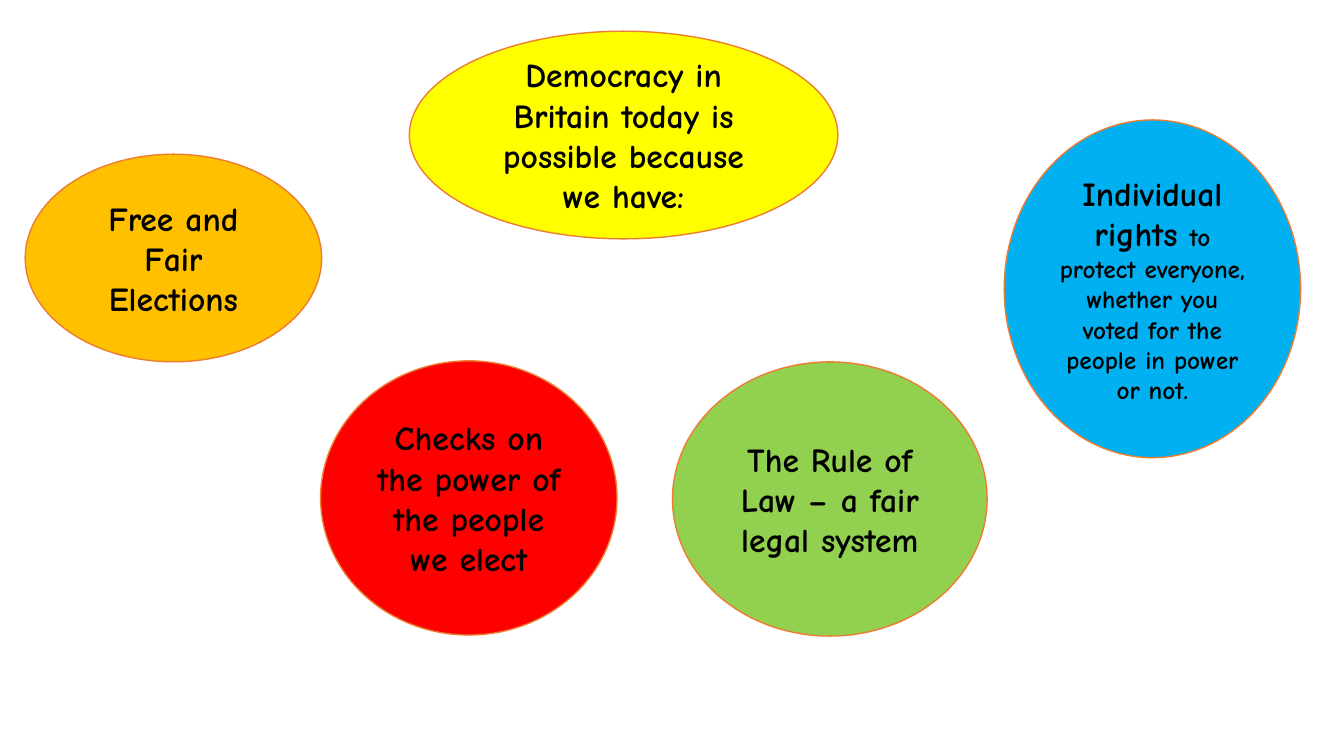
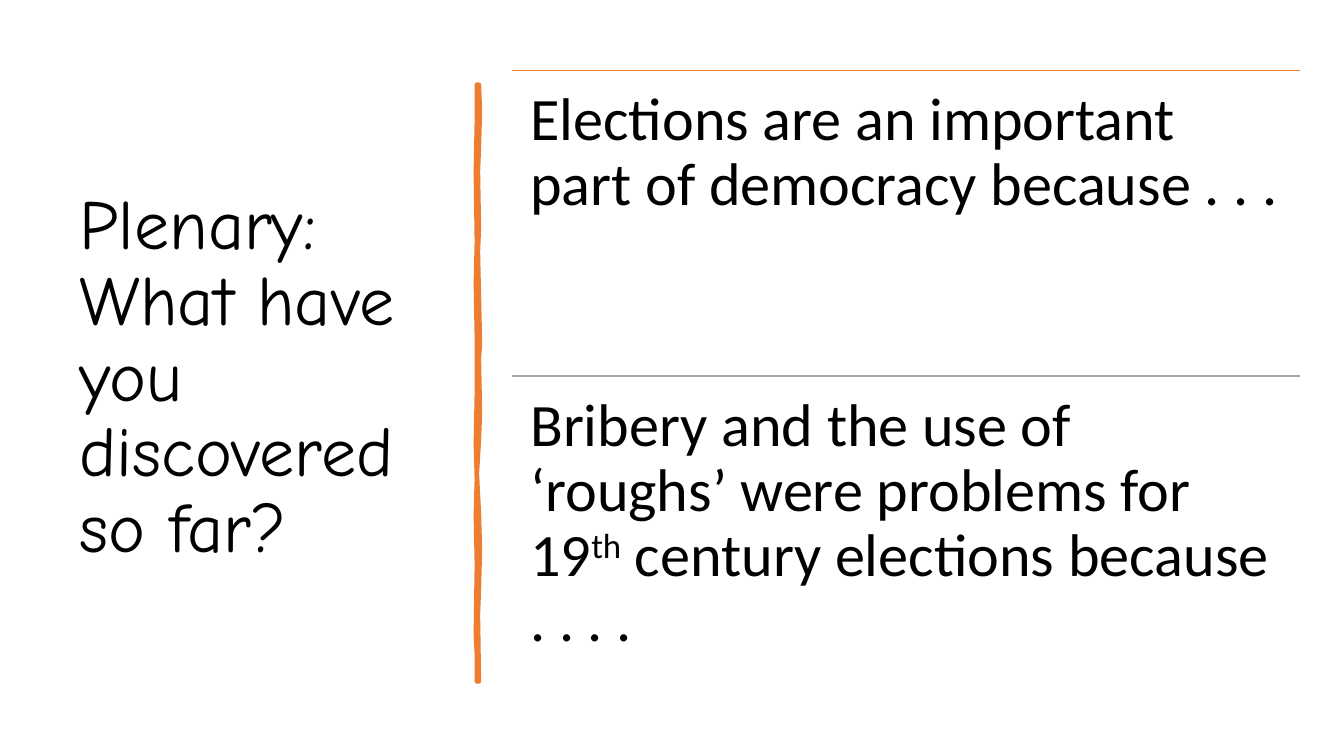
from dataclasses import dataclass

from lxml import etree
from pptx import Presentation
from pptx.dml.color import RGBColor
from pptx.enum.shapes import MSO_CONNECTOR, MSO_SHAPE
from pptx.enum.text import MSO_ANCHOR, MSO_AUTO_SIZE, PP_ALIGN
from pptx.oxml.ns import qn
from pptx.util import Inches, Pt

OVAL = MSO_SHAPE.OVAL
STRAIGHT = MSO_CONNECTOR.STRAIGHT
TOP, MIDDLE = MSO_ANCHOR.TOP, MSO_ANCHOR.MIDDLE
LEFT, CENTER = PP_ALIGN.LEFT, PP_ALIGN.CENTER
NO_AUTOFIT = MSO_AUTO_SIZE.NONE
TITLE_ONLY, BLANK = 5, 6

COLORS = {
    "text": "000000", "accent": "ED7D31", "grey": "A5A5A5", "yellow": "FFFF00",
    "amber": "FFC000", "red": "FF0000", "green": "92D050", "blue": "00B0F0",
}
HAND_FONT, BODY_FONT = "Comic Neue", "Calibri"


@dataclass
class Bubble:
    left: float
    top: float
    width: float
    height: float
    color: str
    text: str
    detail: str = ""


@dataclass
class Prompt:
    line_color: str
    text: str
    superscript: str = ""
    rest: str = ""


BUBBLES = [
    Bubble(4.06, 0.31, 4.25, 2.06, "yellow",
           "Democracy in Britain today is possible because we have:"),
    Bubble(0.25, 1.53, 2.94, 2.06, "amber", "Free and Fair Elections"),
    Bubble(3.18, 3.58, 2.94, 2.72, "red", "Checks on the power of the people we elect"),
    Bubble(6.67, 3.59, 3.12, 2.72, "green", "The Rule of Law – a fair legal system"),
    Bubble(9.96, 1.19, 2.94, 3.35, "blue", "Individual rights ",
           "to protect everyone, whether you voted for the people in power or not."),
]

PROMPTS = [
    Prompt("accent", "Elections are an important part of democracy because . . ."),
    Prompt("grey", "Bribery and the use of ‘roughs’ were problems for 19", "th",
           " century elections because . . . ."),
]
PROMPT_LEFT, PROMPT_TOP, PROMPT_WIDTH, PROMPT_HEIGHT = 5.08, 0.7, 7.81, 3.03
PROMPT_INSET = 0.18

# Outline of the hand-drawn divider: down its right edge, up its left edge
DIVIDER = [
    (4.75, 0.84), (4.76, 1.1), (4.75, 1.46), (4.74, 1.7), (4.75, 2.26),
    (4.74, 2.5), (4.75, 2.94), (4.76, 3.4), (4.75, 3.56), (4.76, 4.1),
    (4.75, 4.36), (4.73, 4.7), (4.75, 5.1), (4.76, 5.45), (4.75, 5.84),
    (4.74, 6.1), (4.75, 6.76),
    (4.73, 6.76), (4.73, 6.5), (4.72, 6.3), (4.73, 5.6), (4.72, 5.1),
    (4.73, 4.75), (4.72, 4.4), (4.73, 3.9), (4.73, 3.35), (4.72, 2.8),
    (4.73, 2.4), (4.72, 1.7), (4.73, 1.2), (4.73, 0.84),
]


def rgb(name: str) -> RGBColor:
    return RGBColor.from_string(COLORS[name])


def set_font(font, name: str, size: float, bold: bool = False) -> None:
    font.name, font.size, font.bold = name, Pt(size), bold
    font.color.rgb = rgb("text")


def add_bubble(s, b: Bubble) -> None:
    sp = s.shapes.add_shape(OVAL, Inches(b.left), Inches(b.top),
                            Inches(b.width), Inches(b.height))
    sp.shadow.inherit = False
    sp.fill.solid()
    sp.fill.fore_color.rgb = rgb(b.color)
    sp.line.color.rgb = rgb("accent")
    sp.line.width = Pt(1)
    tf = sp.text_frame
    tf.word_wrap = True
    tf.vertical_anchor = MIDDLE
    p = tf.paragraphs[0]
    p.alignment = CENTER
    for text, size in ((b.text, 24), (b.detail, 18)):
        if text:
            r = p.add_run()
            r.text = text
            set_font(r.font, HAND_FONT, size, bold=True)


def format_title(s, text: str) -> None:
    title = s.shapes.title
    title.left, title.top = Inches(0.69), Inches(0.7)
    title.width, title.height = Inches(3.74), Inches(6.11)
    tf = title.text_frame
    tf.text = text
    tf.word_wrap = True
    tf.auto_size = NO_AUTOFIT
    tf.vertical_anchor = MIDDLE
    p = tf.paragraphs[0]
    p.alignment = LEFT
    p.line_spacing = 0.9
    set_font(p.font, HAND_FONT, 50)


def add_divider(s) -> None:
    points = [(Inches(x), Inches(y)) for x, y in DIVIDER]
    builder = s.shapes.build_freeform(*points[0])
    builder.add_line_segments(points[1:], close=True)
    sp = builder.convert_to_shape()
    sp.shadow.inherit = False
    sp.fill.solid()
    sp.fill.fore_color.rgb = rgb("accent")
    sp.line.color.rgb = rgb("accent")
    sp.line.width = Pt(3.25)


def add_prompt(s, prompt: Prompt, top: float) -> None:
    left, width = Inches(PROMPT_LEFT), Inches(PROMPT_WIDTH)
    y = Inches(top)
    rule = s.shapes.add_connector(STRAIGHT, left, y, left + width, y)
    rule.line.color.rgb = rgb(prompt.line_color)
    rule.line.width = Pt(1)
    etree.SubElement(rule._element.spPr, qn("a:effectLst"))

    tf = s.shapes.add_textbox(left, y, width, Inches(PROMPT_HEIGHT)).text_frame
    tf.word_wrap = True
    tf.vertical_anchor = TOP
    tf.margin_left = tf.margin_right = Inches(PROMPT_INSET)
    tf.margin_top = tf.margin_bottom = Inches(PROMPT_INSET)
    p = tf.paragraphs[0]
    p.line_spacing = 0.9
    set_font(p.font, BODY_FONT, 43)
    for text in (prompt.text, prompt.superscript, prompt.rest):
        if text:
            r = p.add_run()
            r.text = text
            set_font(r.font, BODY_FONT, 43)
            if text == prompt.superscript:
                r.font._element.set("baseline", "30000")


def build_democracy_slide(prs) -> None:
    s = prs.slides.add_slide(prs.slide_layouts[BLANK])
    for bubble in BUBBLES:
        add_bubble(s, bubble)


def build_plenary_slide(prs) -> None:
    s = prs.slides.add_slide(prs.slide_layouts[TITLE_ONLY])
    format_title(s, "Plenary: What have you discovered so far?")
    add_divider(s)
    for i, prompt in enumerate(PROMPTS):
        add_prompt(s, prompt, PROMPT_TOP + i * PROMPT_HEIGHT)


def main() -> None:
    prs = Presentation()
    prs.slide_width, prs.slide_height = Inches(13.33), Inches(7.5)
    build_democracy_slide(prs)
    build_plenary_slide(prs)
    prs.save("out.pptx")


if __name__ == "__main__":
    main()
